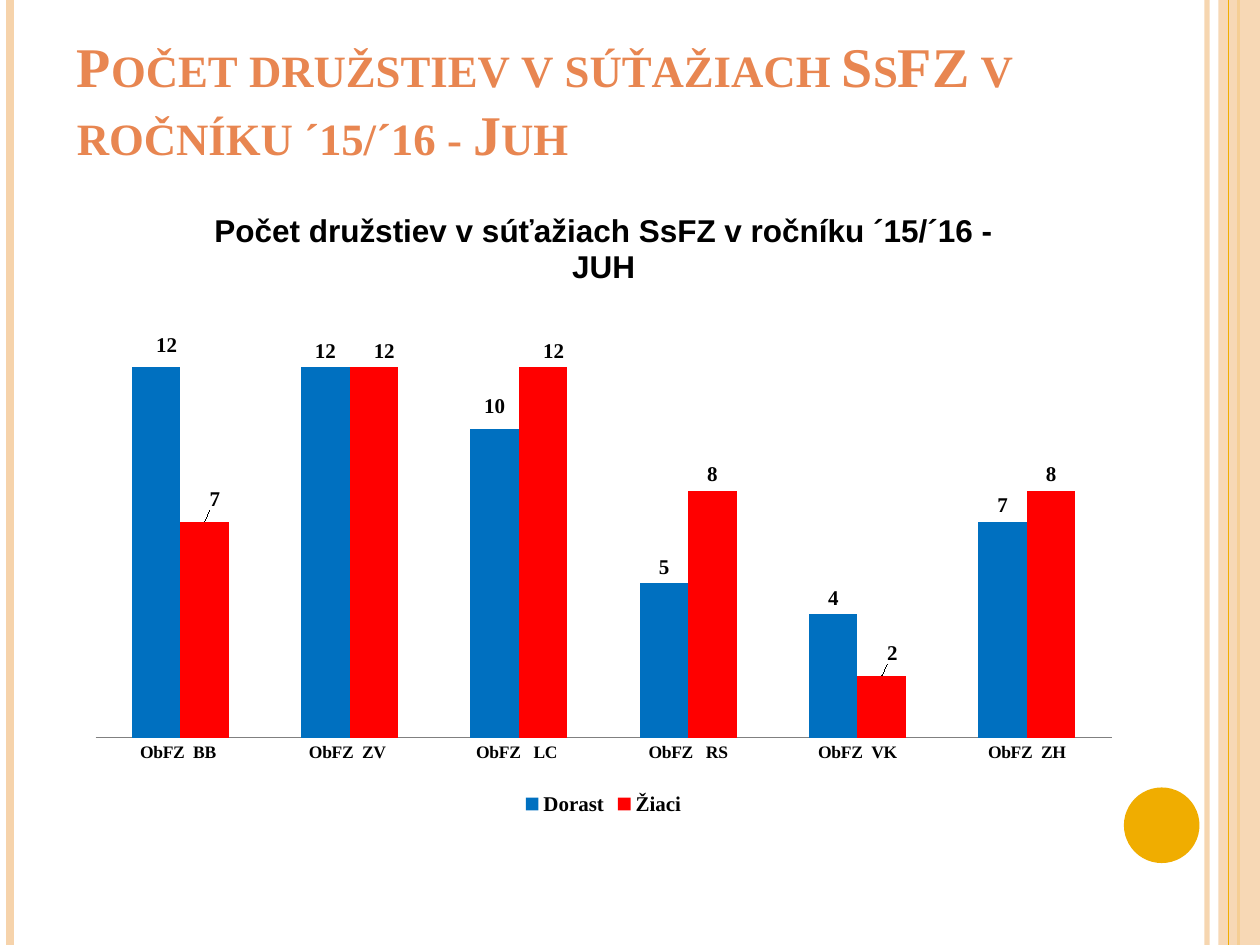
from lxml import etree
from pptx import Presentation
from pptx import util as u
from pptx.chart.data import CategoryChartData
from pptx.dml.color import RGBColor
from pptx.enum import chart as ch, shapes, text
from pptx.oxml import parse_xml
from pptx.oxml.ns import nsdecls, qn

INK = {"peach": "F6D3AB", "gold": "F0AD00", "title": "E88651", "text": "000000",
       "blue": "0070C0", "red": "FF0000", "axis": "808080"}
SERIF = "Times New Roman"


class Deck:
    def __init__(self):
        self.prs = Presentation()
        self.prs.slide_width, self.prs.slide_height = u.Inches(10), u.Inches(7.5)
        self.slide = self.prs.slides.add_slide(self.prs.slide_layouts[5])

    def box(self, *at):
        return [u.Inches(v) for v in at]

    def paint(self, fill, ink, alpha=100):
        fill.solid()
        fill.fore_color.rgb = RGBColor.from_string(INK[ink])
        if alpha < 100:
            tag = fill._xPr.find(".//" + qn("a:srgbClr"))
            etree.SubElement(tag, qn("a:alpha")).set("val", str(alpha * 1000))

    def type(self, font, size, ink="text", name=SERIF):
        font.size, font.bold, font.name = u.Pt(size), True, name
        font.color.rgb = RGBColor.from_string(INK[ink])

    def rule(self, x, ink, width, alpha=100):
        line = self.slide.shapes.add_connector(
            shapes.MSO_CONNECTOR.STRAIGHT, *self.box(x, 0, x, 7.5))
        line.line.width = u.Pt(width)
        self.paint(line.line.fill, ink, alpha)
        etree.SubElement(line._element.spPr, qn("a:effectLst"))

    def shape(self, kind, at, ink, alpha=100):
        item = self.slide.shapes.add_shape(kind, *self.box(*at))
        item.shadow.inherit = False
        self.paint(item.fill, ink, alpha)
        item.line.fill.background()

    def title(self, at, words):
        head = self.slide.shapes.title
        head.left, head.top, head.width, head.height = self.box(*at)
        frame = head.text_frame
        frame.word_wrap = True
        frame.auto_size = text.MSO_AUTO_SIZE.NONE
        frame.vertical_anchor = text.MSO_ANCHOR.BOTTOM
        para = frame.paragraphs[0]
        para.alignment = text.PP_ALIGN.LEFT
        run = para.add_run()
        run.text = words
        self.type(run.font, 32, "title")
        run.font._element.set("cap", "small")
        tree = self.slide.shapes._spTree
        tree.remove(head._element)
        tree.append(head._element)

    def layout(self, **spots):
        tags = "".join(f'<c:{k} val="{v}"/>' for k, v in spots.items())
        return parse_xml(f'<c:layout {nsdecls("c")}><c:manualLayout>{tags}'
                         '</c:manualLayout></c:layout>')

    def chart(self, at, words, cats, rows):
        data = CategoryChartData()
        data.categories = cats
        for name, vals, ink, moves in rows:
            data.add_series(name, vals)
        chart = self.slide.shapes.add_chart(
            ch.XL_CHART_TYPE.COLUMN_CLUSTERED, *self.box(*at), data).chart
        chart.font.size, chart.font.name = u.Pt(10), "Arial"
        chart.has_title = True
        run = chart.chart_title.text_frame.paragraphs[0].add_run()
        run.text = words
        self.type(run.font, 18, name="Arial")
        chart.chart_title.include_in_layout = False
        chart.has_legend = True
        chart.legend.position = ch.XL_LEGEND_POSITION.BOTTOM
        chart.legend.include_in_layout = False
        self.type(chart.legend.font, 12)
        axis = chart.category_axis
        axis.major_tick_mark = ch.XL_TICK_MARK.NONE
        self.type(axis.tick_labels.font, 10)
        self.paint(axis.format.line.fill, "axis")
        scale = chart.value_axis
        scale.visible = scale.has_major_gridlines = False
        scale.minimum_scale, scale.maximum_scale = 0, 14
        plot = chart.plots[0]
        plot.gap_width, plot.overlap, plot.vary_by_categories = 150, 0, False
        for bars, (name, vals, ink, moves) in zip(plot.series, rows):
            self.bars(bars, ink, moves)
        area = chart._chartSpace.find(".//" + qn("c:plotArea"))
        for old in area.findall(qn("c:layout")):
            area.remove(old)
        area.insert(0, self.layout(layoutTarget="inner", xMode="edge", yMode="edge",
                                   x=0.02, y=0.19, w=0.96, h=0.68))

    def bars(self, bars, ink, moves):
        self.paint(bars.format.fill, ink)
        labels = bars.data_labels
        labels.show_value = True
        labels.position = ch.XL_LABEL_POSITION.OUTSIDE_END
        self.type(labels.font, 12)
        for spot, (x, y) in moves.items():
            label = bars.points[spot].data_label
            self.type(label.font, 12)
            label.position = ch.XL_LABEL_POSITION.OUTSIDE_END
        for tag in bars._element.iter(qn("c:dLbl")):
            x, y = moves[int(tag.find(qn("c:idx")).get("val"))]
            tag.insert(1, self.layout(x=x, y=y))


def main():
    deck = Deck()
    deck.rule(9.58, "peach", 3, 93)
    deck.rule(0.08, "peach", 4.5)
    deck.rule(9.83, "gold", 1.5)
    deck.shape(shapes.MSO_SHAPE.RECTANGLE, (9.67, 0, 0.33, 7.5), "peach", 87)
    deck.rule(9.75, "gold", 0.75)
    deck.shape(shapes.MSO_SHAPE.OVAL, (8.92, 6.25, 0.6, 0.6), "gold")
    words = "Počet družstiev v súťažiach SsFZ v ročníku ´15/´16 - "
    deck.title((0.51, 0.21, 8.67, 1.16), words + "Juh")
    cats = ["ObFZ  BB ", "ObFZ  ZV ", "ObFZ   LC ", "ObFZ   RS", "ObFZ  VK", "ObFZ  ZH"]
    rows = [
        ("Dorast", (12, 12, 10, 5, 4, 7), "blue", {0: (0.01, -0.01), 2: (0, -0.01)}),
        ("Žiaci", (7, 12, 12, 8, 2, 8), "red",
         {0: (0.01, -0.01), 1: (0.01, 0), 2: (0.01, 0), 4: (0.01, -0.01)}),
    ]
    deck.chart((0.59, 1.47, 8.4, 5.04), words + "JUH", cats, rows)
    deck.prs.save("out.pptx")


if __name__ == "__main__":
    main()
